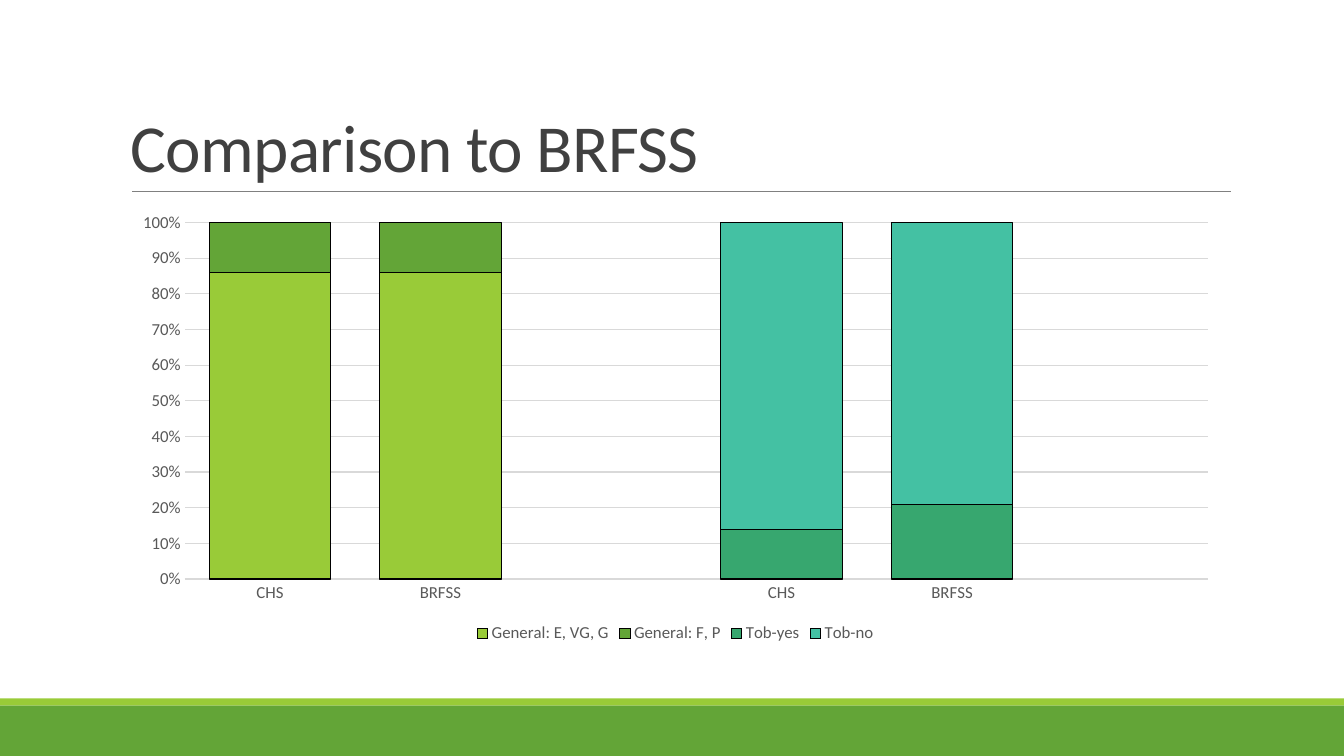
import collections
import dataclasses

import pptx
import pptx.chart.data
import pptx.dml.color
import pptx.enum.chart
import pptx.enum.shapes
import pptx.enum.text
import pptx.oxml
import pptx.oxml.ns
import pptx.util

Box = collections.namedtuple("Box", "left top width height")


@dataclasses.dataclass(frozen=True)
class Theme:
    font: str = "Calibri"
    title_size: int = 48
    label_size: int = 12
    chart_size: int = 10
    thin: float = 0.5
    line: float = 0.75
    title: str = "404040"
    label: str = "595959"
    rule: str = "808080"
    grid: str = "D9D9D9"
    outline: str = "000000"
    lime: str = "99CB38"
    green: str = "63A537"
    jade: str = "37A76F"
    teal: str = "44C1A3"


THEME = Theme()
COLUMNS, ROWS = 133.3, 75
CELL = pptx.util.Inches(0.1)

CATEGORIES = ["CHS", "BRFSS", "", "CHS", "BRFSS", ""]
SERIES = [
    ("General: E, VG, G", [86, 86, None, None, None, None], THEME.lime),
    ("General: F, P", [14, 14, None, None, None, None], THEME.green),
    ("Tob-yes", [None, None, None, 14, 21, None], THEME.jade),
    ("Tob-no", [None, None, None, 86, 79, None], THEME.teal),
]


def cells(*counts):
    return [round(count * CELL) for count in counts]


def rgb(code):
    return pptx.dml.color.RGBColor.from_string(code)


def style_font(font, size, color):
    font.name = THEME.font
    font.size = pptx.util.Pt(size)
    font.color.rgb = rgb(color)


def style_line(line, color, width):
    line.color.rgb = rgb(color)
    line.width = pptx.util.Pt(width)


def add_footer(page, box):
    """Fill the box with a green band under a thin lime stripe."""
    stripe = 0.7
    bands = [
        (box.top, stripe, THEME.lime),
        (box.top + stripe, box.height - stripe, THEME.green),
    ]
    for top, height, color in bands:
        band = page.shapes.add_shape(
            pptx.enum.shapes.MSO_SHAPE.RECTANGLE,
            *cells(box.left, top, box.width, height))
        band.shadow.inherit = False
        band.fill.solid()
        band.fill.fore_color.rgb = rgb(color)
        band.line.fill.background()


def add_title(page, box, text):
    """Set the title at the foot of the box, with a rule along its lower edge."""
    frame = page.shapes.add_textbox(*cells(*box)).text_frame
    frame.word_wrap = True
    frame.vertical_anchor = pptx.enum.text.MSO_ANCHOR.BOTTOM
    para = frame.paragraphs[0]
    para.line_spacing = 0.85
    span = para.add_run()
    span.text = text
    style_font(span.font, THEME.title_size, THEME.title)
    span.font._element.set("spc", "-50")

    left, bottom = box.left + 1.1, box.top + box.height
    rule = page.shapes.add_connector(
        pptx.enum.shapes.MSO_CONNECTOR.STRAIGHT,
        *cells(left, bottom, left + 109, bottom))
    style_line(rule.line, THEME.rule, THEME.thin)
    properties = rule._element.spPr
    properties.append(pptx.oxml.parse_xml(
        "<a:effectLst %s/>" % pptx.oxml.ns.nsdecls("a")))


def style_axes(chart):
    for axis in (chart.category_axis, chart.value_axis):
        axis.major_tick_mark = pptx.enum.chart.XL_TICK_MARK.NONE
        axis.minor_tick_mark = pptx.enum.chart.XL_TICK_MARK.NONE
        style_font(axis.tick_labels.font, THEME.label_size, THEME.label)
    style_line(chart.category_axis.format.line, THEME.grid, THEME.line)
    values = chart.value_axis
    values.format.line.fill.background()
    values.has_major_gridlines = True
    style_line(values.major_gridlines.format.line, THEME.grid, THEME.line)
    values.tick_labels.number_format = "0%"
    values.tick_labels.number_format_is_linked = False


def add_survey_chart(page, box):
    data = pptx.chart.data.CategoryChartData()
    data.categories = CATEGORIES
    for name, values, _ in SERIES:
        data.add_series(name, values)
    chart = page.shapes.add_chart(
        pptx.enum.chart.XL_CHART_TYPE.COLUMN_STACKED_100,
        *cells(*box), data).chart
    style_font(chart.font, THEME.chart_size, THEME.outline)
    chart.has_title = False
    style_axes(chart)

    chart.has_legend = True
    chart.legend.position = pptx.enum.chart.XL_LEGEND_POSITION.BOTTOM
    chart.legend.include_in_layout = False
    style_font(chart.legend.font, THEME.label_size, THEME.label)

    plot = chart.plots[0]
    plot.gap_width = 40
    plot.overlap = 100
    plot.vary_by_categories = False
    for series, (_, _, color) in zip(plot.series, SERIES):
        series.format.fill.solid()
        series.format.fill.fore_color.rgb = rgb(color)
        style_line(series.format.line, THEME.outline, THEME.line)


def main():
    deck = pptx.Presentation()
    deck.slide_width, deck.slide_height = cells(COLUMNS, ROWS)
    page = deck.slides.add_slide(deck.slide_layouts[6])
    add_footer(page, Box(0, 69.3, COLUMNS, ROWS - 69.3))
    add_title(page, Box(12, 3.1, 110, 15.9), "Comparison to BRFSS")
    add_survey_chart(page, Box(12, 20.2, 110, 44))
    deck.save("out.pptx")


if __name__ == "__main__":
    main()
